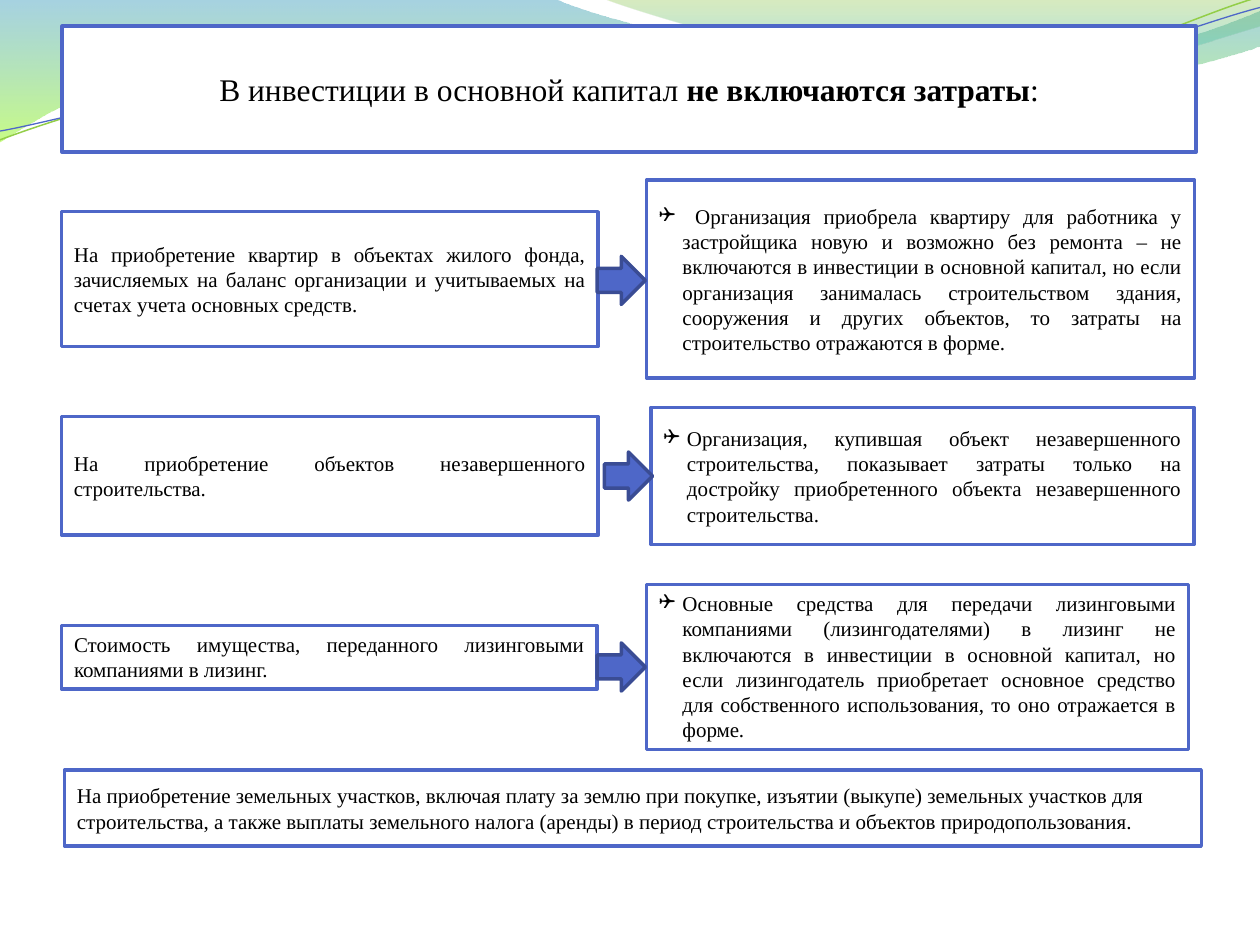
import math
import pptx
import pptx.dml.color
import pptx.enum.shapes
import pptx.enum.text
import pptx.oxml.ns
import pptx.util
import lxml.etree

Pt = pptx.util.Pt
RGB = pptx.dml.color.RGBColor
KIND = pptx.enum.shapes.MSO_SHAPE
ALIGN = pptx.enum.text.PP_ALIGN
ANCHOR = pptx.enum.text.MSO_ANCHOR
qn = pptx.oxml.ns.qn

BLUE = RGB(0x4E, 0x67, 0xC8)
NAVY = RGB(0x3A, 0x4C, 0x94)
LIME = RGB(0x93, 0xCE, 0x48)
WHITE = RGB(255, 255, 255)
BLACK = RGB(0, 0, 0)
TEAL = RGB(0x3B, 0x9C, 0xBF)
GREEN = RGB(0x9C, 0xFA, 0x24)
LEAF = RGB(0x7E, 0xBE, 0x2C)
SKY = RGB(0x39, 0xC1, 0xF1)

deck = pptx.Presentation()
deck.slide_width, deck.slide_height = Pt(720), Pt(540)
slide = deck.slides.add_slide(deck.slide_layouts[6])
shapes = slide.shapes


def wave(start, parts, closed, hub=(0, 0), tilt=0):
    """Draw line ends (x, y) and cubic curves of three points, tilted by degrees about hub."""
    sin, cos = math.sin(math.radians(-tilt)), math.cos(math.radians(-tilt))
    dots = [start] + [part[i:i + 2] for part in parts for i in range(0, len(part), 2)]
    flat = []
    for x, y in dots:
        dx, dy = x - hub[0], y - hub[1]
        flat.append((Pt(hub[0] + dx * cos - dy * sin), Pt(hub[1] + dx * sin + dy * cos)))
    pen = shapes.build_freeform(*flat[0])
    pen.add_line_segments(flat[1:], close=closed)
    form = pen.convert_to_shape()
    form.shadow.inherit = False
    form.rotation = tilt
    steps = form._element.findall(".//" + qn("a:lnTo"))
    for part in parts:
        if len(part) == 6:
            curve = lxml.etree.Element(qn("a:cubicBezTo"))
            steps[0].addprevious(curve)
            for step in steps[:3]:
                curve.append(step[0])
                step.getparent().remove(step)
        steps = steps[len(part) // 2:]
    return form


def write(runs, box, size=12, align=ALIGN.JUSTIFY, anchor=ANCHOR.MIDDLE, bullet=False):
    """Add a framed box; runs is a list of (text, style) pairs, style being "", "b" or "i"."""
    frame = shapes.add_shape(KIND.RECTANGLE, *map(Pt, box))
    frame.shadow.inherit = False
    frame.fill.solid()
    frame.fill.fore_color.rgb = WHITE
    frame.line.color.rgb = BLUE
    frame.line.width = Pt(2)
    body = frame.text_frame
    body.word_wrap = True
    body.vertical_anchor = anchor
    para = body.paragraphs[0]
    para.alignment = align
    for text, style in runs:
        run = para.add_run()
        run.text = text
        run.font.name = "Times New Roman"
        run.font.size = Pt(size)
        run.font.bold = style == "b"
        run.font.italic = style == "i"
        run.font.color.rgb = BLACK
    if bullet:
        props = para._p.get_or_add_pPr()
        props.set("marL", str(Pt(13.5)))
        props.set("indent", str(Pt(-13.5)))
        lxml.etree.SubElement(props, qn("a:buFont")).set("typeface", "Wingdings")
        lxml.etree.SubElement(props, qn("a:buChar")).set("char", "❑")


# Waves along the top: start, parts, then (position, colour, opacity) stops
fills = [
    ((0, 0),
     [(317, -0.7), (343, 12, 478, 45, 546, 45), (614, 45, 690, 19, 720, 6), (720.7, 26),
      (708, 32, 626, 55, 537, 54), (448, 54, 275, 20, 185, 24), (93, 26, 33, 60, -0.7, 81.4)],
     [(0, TEAL, 45), (1, GREEN, 55)]),
    ((345, -0.7),
     [(366, 8, 491, 45, 554, 47), (616, 49.7, 692, 23, 720, 15), (720, 0)],
     [(0, LEAF, 30), (0.8, SKY, 45)]),
]
for start, parts, stops in fills:
    form = wave(start, parts, True)
    form.line.fill.background()
    form.fill.gradient()
    form.fill.gradient_angle = 270
    for stop, (place, tint, alpha) in zip(form.fill.gradient_stops, stops):
        stop.position = place
        stop.color.rgb = tint
        node = stop._gs.find(qn("a:srgbClr"))
        lxml.etree.SubElement(node, qn("a:alpha")).set("val", str(alpha * 1000))

lines = [
    ((0, 79.9), [(34.6, 67, 113.8, 41, 199.4, 37.4), (284.4, 33.8, 427, 64.1, 513.4, 57.6),
                 (599.8, 51.1, 675.4, 10.8, 718.6, -1.4)], (359.3, 41.4), LIME, 0.85),
    ((0, 74.9), [(33.8, 69.1, 118, 43.9, 203.8, 40.3), (290.2, 36.7, 429.8, 60.5, 516.2, 54),
                 (602, 48.2, 677.5, 15.1, 720, 4.3)], (359.6, 42.5), BLUE, 0.75),
]
for start, parts, hub, tint, width in lines:
    form = wave(start, parts, False, hub, -2.7)
    form.fill.background()
    form.line.color.rgb = tint
    form.line.width = Pt(width)

# Title
write([("В инвестиции в основной капитал ", ""), ("не включаются затраты", "b"), (":", "")],
      (35.5, 15, 648, 72), size=18, align=ALIGN.CENTER)

# Rows: cost, its box, remark, its box, left and top of the arrow, anchor
rows = [
    ("На приобретение квартир в объектах жилого фонда, зачисляемых на баланс организации "
     "и учитываемых на счетах учета основных средств.",
     (35.2, 121, 306.7, 77),
     [(" Организация приобрела квартиру для работника у застройщика новую и возможно без ремонта "
       "– не включаются в инвестиции в основной капитал, но если организация занималась "
       "строительством здания, сооружения и других объектов, то затраты на строительство "
       "отражаются в форме.", "")],
     (369.4, 103, 313.2, 113), (341.3, 146.5), ANCHOR.MIDDLE),
    ("На приобретение объектов незавершенного строительства. ",
     (35.2, 238.1, 306.7, 67.7),
     [("Организация, купившая объект незавершенного строительства, показывает затраты только "
       "на достройку приобретенного объекта незавершенного строительства.", "")],
     (372, 232.8, 310.3, 78.4), (345.4, 258.3), ANCHOR.MIDDLE),
    ("Стоимость имущества, переданного лизинговыми компаниями в лизинг.",
     (35.2, 357.4, 306, 36.3),
     [("Основные средства для передачи лизинговыми компаниями (лизингодателями) в лизинг "
       "не включаются в инвестиции в основной капитал, но если лизингодатель приобретает "
       "основное средство для собственного использования, то оно отражается в форме", ""),
      (".", "i")],
     (369.4, 334, 309.8, 94.3), (341.3, 367.4), ANCHOR.TOP),
]
for cost, left, remark, right, spot, anchor in rows:
    write([(cost, "")], left, anchor=anchor)
    write(remark, right, anchor=anchor, bullet=True)
    arrow = shapes.add_shape(KIND.RIGHT_ARROW, Pt(spot[0]), Pt(spot[1]), Pt(27.5), Pt(27.5))
    arrow.shadow.inherit = False
    arrow.fill.solid()
    arrow.fill.fore_color.rgb = BLUE
    arrow.line.color.rgb = NAVY
    arrow.line.width = Pt(2)

# Land costs
write([("На приобретение земельных участков, включая плату за землю при покупке, изъятии (выкупе) "
        "земельных участков для строительства, а также выплаты земельного налога (аренды) в период "
        "строительства и объектов природопользования.", "")],
      (36.9, 440.1, 649.6, 43.4), align=ALIGN.LEFT)

deck.save("out.pptx")
